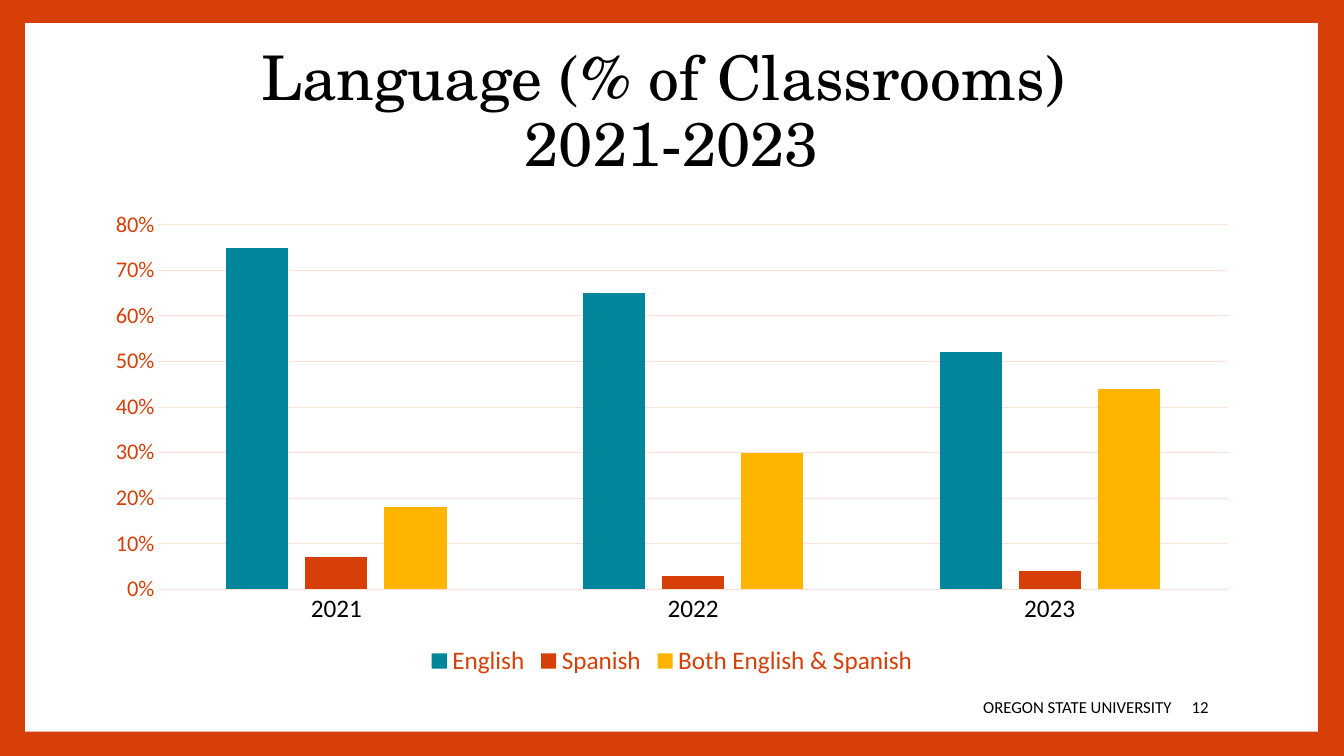
from pptx import Presentation
from pptx.chart.data import CategoryChartData
from pptx.dml.color import RGBColor
from pptx.enum.chart import XL_CHART_TYPE, XL_LEGEND_POSITION, XL_TICK_MARK
from pptx.enum.shapes import MSO_SHAPE
from pptx.enum.text import MSO_ANCHOR, PP_ALIGN
from pptx.util import Inches, Pt

RECT = MSO_SHAPE.RECTANGLE
COLUMNS = XL_CHART_TYPE.COLUMN_CLUSTERED
BOTTOM = XL_LEGEND_POSITION.BOTTOM
NO_TICK = XL_TICK_MARK.NONE
MIDDLE = MSO_ANCHOR.MIDDLE
LEFT, CENTER, RIGHT = PP_ALIGN.LEFT, PP_ALIGN.CENTER, PP_ALIGN.RIGHT

COLORS = {"orange": "D73F09", "white": "FFFFFF", "black": "000000",
          "grid": "FDE0D6", "teal": "00859B", "yellow": "FFB500"}
BODY, HEADING = "Calibri", "TeX Gyre Schola"

W, H = 13.33, 7.5
MARGIN = 0.92
CONTENT_W = W - 2 * MARGIN
FOOTER_TOP, FOOTER_H, NUMBER_W = 6.81, 0.4, 0.69

prs = Presentation()
prs.slide_width, prs.slide_height = Inches(W), Inches(H)
s = prs.slides.add_slide(prs.slide_layouts[6])


def rgb(name):
    return RGBColor.from_string(COLORS[name])


def style(font, size, color="black", name=BODY):
    font.size, font.name = Pt(size), name
    font.color.rgb = rgb(color)


def add_text(text, x, y, w, h, size, align=LEFT, name=BODY, spacing=1.0):
    tf = s.shapes.add_textbox(Inches(x), Inches(y), Inches(w), Inches(h)).text_frame
    tf.word_wrap, tf.vertical_anchor = True, MIDDLE
    p = tf.paragraphs[0]
    p.alignment, p.line_spacing = align, spacing
    for i, line in enumerate(text.split("\n")):
        if i:
            p.add_line_break()
        r = p.add_run()
        r.text = line
        style(r.font, size, name=name)
    return p


# Orange frame around a white panel
s.background.fill.solid()
s.background.fill.fore_color.rgb = rgb("orange")
panel = s.shapes.add_shape(RECT, Inches(0.25), Inches(0.23), Inches(12.82), Inches(7.03))
panel.shadow.inherit = False
panel.fill.solid()
panel.fill.fore_color.rgb = rgb("white")
panel.line.fill.background()

# Title
add_text("Language (% of Classrooms) \n2021-2023", MARGIN, 0.4, CONTENT_W, 1.45,
         44, align=CENTER, name=HEADING, spacing=0.9)

# Chart data
data = CategoryChartData(number_format="0%")
data.categories = ["2021", "2022", "2023"]
languages = [
    ("English", (0.75, 0.65, 0.52), "teal"),
    ("Spanish", (0.07, 0.03, 0.04), "orange"),
    ("Both English & Spanish", (0.18, 0.30, 0.44), "yellow"),
]
for name, values, _ in languages:
    data.add_series(name, values)

chart = s.shapes.add_chart(COLUMNS, Inches(MARGIN), Inches(2), Inches(CONTENT_W),
                           Inches(4.76), data).chart
style(chart.font, 10, "orange")
chart.has_title = False

# Columns
plot = chart.plots[0]
plot.vary_by_categories = False
plot.gap_width, plot.overlap = 219, -27
for series, (_, _, color) in zip(plot.series, languages):
    series.format.fill.solid()
    series.format.fill.fore_color.rgb = rgb(color)
    series.invert_if_negative = False

# Axes and gridlines
years, shares = chart.category_axis, chart.value_axis
for axis, size, color in ((years, 18, "black"), (shares, 16, "orange")):
    axis.major_tick_mark = axis.minor_tick_mark = NO_TICK
    style(axis.tick_labels.font, size, color)
shares.minimum_scale, shares.maximum_scale, shares.major_unit = 0, 0.8, 0.1
shares.tick_labels.number_format = "0%"
shares.tick_labels.number_format_is_linked = False
shares.format.line.fill.background()
for line in (years.format.line, shares.major_gridlines.format.line):
    line.color.rgb = rgb("grid")
    line.width = Pt(0.75)

# Legend
chart.has_legend = True
chart.legend.position = BOTTOM
chart.legend.include_in_layout = False
style(chart.legend.font, 18, "orange")

# Footer and slide number
number_x = W - MARGIN - NUMBER_W
for text, x, w, align in (("OREGON STATE UNIVERSITY", 4.42, number_x - 4.42, RIGHT),
                          ("12", number_x, NUMBER_W, LEFT)):
    p = add_text(text, x, FOOTER_TOP, w, FOOTER_H, 12, align=align)
    p.space_after = Pt(6)

prs.save("out.pptx")
